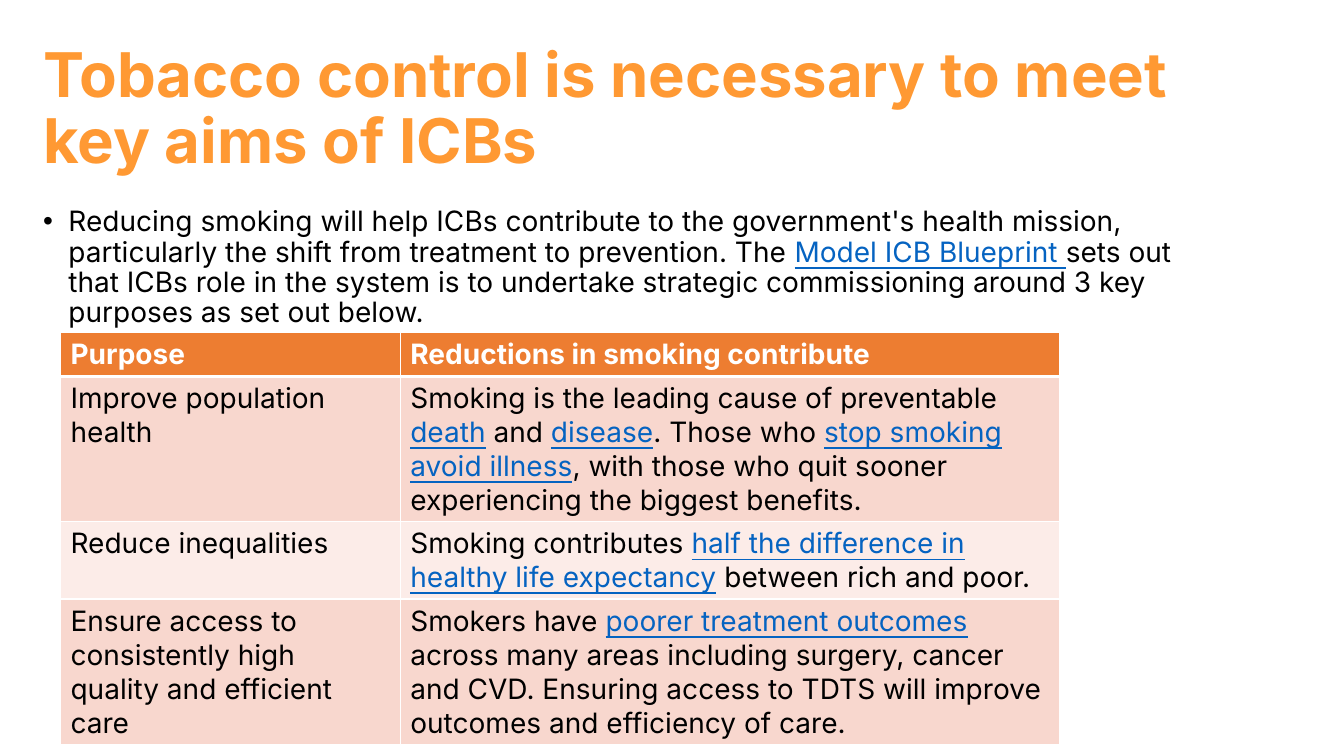
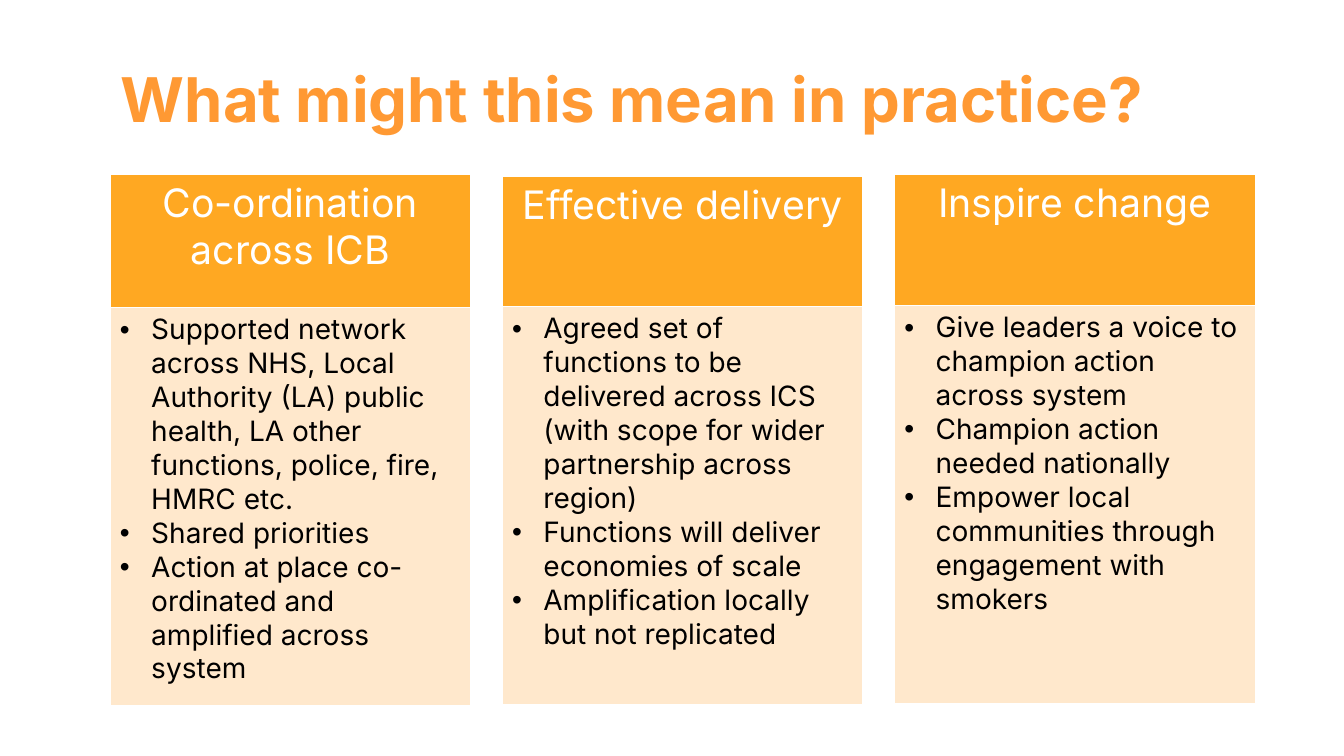
from lxml import etree
from pptx import Presentation
from pptx.dml.color import RGBColor
from pptx.enum.text import MSO_ANCHOR, PP_ALIGN
from pptx.oxml.ns import qn
from pptx.util import Inches, Pt

MIDDLE, TOP = MSO_ANCHOR.MIDDLE, MSO_ANCHOR.TOP
LEFT, CENTER = PP_ALIGN.LEFT, PP_ALIGN.CENTER

WHITE = RGBColor(0xFF, 0xFF, 0xFF)
BLACK = RGBColor(0x00, 0x00, 0x00)
LINK_BLUE = RGBColor(0x05, 0x63, 0xC1)
TITLE_ORANGE = RGBColor(0xFF, 0x99, 0x33)
PURPOSE_HEADER = RGBColor(0xED, 0x7D, 0x31)
PURPOSE_BANDS = (RGBColor(0xF8, 0xD7, 0xCE), RGBColor(0xFC, 0xEC, 0xE8))
THEME_HEADER = RGBColor(0xFF, 0xA8, 0x22)
THEME_BODY = RGBColor(0xFF, 0xE8, 0xCC)

TITLE_FORMAT = {"name": "Inter", "size": Pt(44), "bold": True}
BODY_FORMAT = {"name": "Inter", "size": Pt(20), "bold": False}
PURPOSE_HEADER_FORMAT = {**BODY_FORMAT, "bold": True}
THEME_HEADER_FORMAT = {**BODY_FORMAT, "size": Pt(28)}

# Text between bars is shown as a link.
INTRO = (
    "Reducing smoking will help ICBs contribute to the government's health mission, "
    "particularly the shift from treatment to prevention. The |Model ICB Blueprint |"
    "sets out that ICBs role in the system is to undertake strategic commissioning "
    "around 3 key purposes as set out below."
)
PURPOSE_COLUMNS = (3.37, 6.54)
PURPOSE_ROWS = (
    (0.42, "Purpose", "Reductions in smoking contribute"),
    (1.44, "Improve population health",
     "Smoking is the leading cause of preventable |death| and |disease|. Those who "
     "|stop smoking avoid illness|, with those who quit sooner experiencing the "
     "biggest benefits."),
    (0.77, "Reduce inequalities",
     "Smoking contributes |half the difference in healthy life expectancy| between "
     "rich and poor."),
    (1.44, "Ensure access to consistently high quality and efficient care",
     "Smokers have |poorer treatment outcomes |across many areas including surgery, "
     "cancer and CVD. Ensuring access to TDTS will improve outcomes and efficiency "
     "of care."),
)

THEME_LEFT, THEME_STEP, THEME_WIDTH, THEME_BODY_HEIGHT = 1.09, 3.89, 3.58, 3.95
# Top, header height, heading, points
THEMES = (
    (1.73, 1.32, "Co-ordination across ICB", (
        "Supported network across NHS, Local Authority (LA) public health, LA other "
        "functions, police, fire, HMRC etc.",
        "Shared priorities",
        "Action at place co-ordinated and amplified across system")),
    (1.75, 1.29, "Effective delivery", (
        "Agreed set of functions to be delivered across ICS (with scope for wider "
        "partnership across region)",
        "Functions will deliver economies of scale",
        "Amplification locally but not replicated")),
    (1.73, 1.3, "Inspire change", (
        "Give leaders a voice to champion action across system",
        "Champion action needed nationally",
        "Empower local communities through engagement with smokers")),
)


def add_bullet(paragraph, indent):
    properties = paragraph._p.get_or_add_pPr()
    properties.set("marL", str(Inches(indent)))
    properties.set("indent", str(-Inches(indent)))
    etree.SubElement(properties, qn("a:buFont")).set("typeface", "Arial")
    etree.SubElement(properties, qn("a:buChar")).set("char", "•")


def write_text(frame, texts, text_format, color, align=LEFT, spacing=1.0, bullet=None):
    """Write one paragraph per text; bullet is the hanging indent in inches."""
    for index, text in enumerate(texts):
        paragraph = frame.add_paragraph() if index else frame.paragraphs[0]
        if bullet:
            add_bullet(paragraph, bullet)
        paragraph.alignment = align
        paragraph.line_spacing = spacing
        for part, words in enumerate(text.split("|")):
            is_link = part % 2 == 1
            run = paragraph.add_run()
            run.text = words
            for attribute, value in text_format.items():
                setattr(run.font, attribute, value)
            run.font.underline = is_link
            run.font.color.rgb = LINK_BLUE if is_link else color


def add_text(slide, box, texts, text_format, color, anchor=TOP, bullet=None):
    frame = slide.shapes.add_textbox(*map(Inches, box)).text_frame
    frame.word_wrap = True
    frame.vertical_anchor = anchor
    write_text(frame, texts, text_format, color, spacing=0.9, bullet=bullet)


def add_title(slide, box, title):
    add_text(slide, box, [title], TITLE_FORMAT, TITLE_ORANGE, anchor=MIDDLE)


def add_plain_table(slide, left, top, widths, heights):
    """Add a table without the banded style."""
    table = slide.shapes.add_table(
        len(heights), len(widths), Inches(left), Inches(top),
        Inches(sum(widths)), Inches(sum(heights))).table
    table.first_row = table.horz_banding = False
    for column, width in zip(table.columns, widths):
        column.width = Inches(width)
    for row, height in zip(table.rows, heights):
        row.height = Inches(height)
    return table


def paint_cell(cell, fill, top=1, bottom=1):
    """Fill a cell and give it white borders, with widths in points."""
    properties = cell._tc.get_or_add_tcPr()
    for side, width in (("L", 1), ("R", 1), ("T", top), ("B", bottom)):
        border = etree.SubElement(properties, qn(f"a:ln{side}"), w=str(Pt(width)))
        solid = etree.SubElement(border, qn("a:solidFill"))
        etree.SubElement(solid, qn("a:srgbClr")).set("val", str(WHITE))
    cell.fill.solid()
    cell.fill.fore_color.rgb = fill


def add_purpose_table(slide):
    heights = [row[0] for row in PURPOSE_ROWS]
    table = add_plain_table(slide, 0.6, 3.3, PURPOSE_COLUMNS, heights)
    for row, (_, *texts) in enumerate(PURPOSE_ROWS):
        for column, text in enumerate(texts):
            cell = table.cell(row, column)
            if row == 0:
                paint_cell(cell, PURPOSE_HEADER, bottom=3)
                write_text(cell.text_frame, [text], PURPOSE_HEADER_FORMAT, WHITE)
            else:
                paint_cell(cell, PURPOSE_BANDS[(row - 1) % 2], top=3 if row == 1 else 1)
                write_text(cell.text_frame, [text], BODY_FORMAT, BLACK)


def add_theme(slide, left, top, header_height, heading, points):
    table = add_plain_table(
        slide, left, top, [THEME_WIDTH], [header_height, THEME_BODY_HEIGHT])
    header, body = table.cell(0, 0), table.cell(1, 0)
    paint_cell(header, THEME_HEADER)
    write_text(header.text_frame, [heading], THEME_HEADER_FORMAT, WHITE, align=CENTER)
    paint_cell(body, THEME_BODY)
    write_text(body.text_frame, points, BODY_FORMAT, BLACK, bullet=0.31)


def main():
    deck = Presentation()
    deck.slide_width, deck.slide_height = Inches(13.33), Inches(7.5)
    blank = deck.slide_layouts[6]

    aims = deck.slides.add_slide(blank)
    add_title(aims, (0.33, 0.37, 11.5, 1.45),
              "Tobacco control is necessary to meet key aims of ICBs")
    add_text(aims, (0.33, 2.01, 11.61, 1.29), [INTRO], BODY_FORMAT, BLACK, bullet=0.25)
    add_purpose_table(aims)

    practice = deck.slides.add_slide(blank)
    add_title(practice, (1.1, 0.29, 10.86, 1.45), "What might this mean in practice?")
    for index, theme in enumerate(THEMES):
        add_theme(practice, THEME_LEFT + index * THEME_STEP, *theme)

    deck.save("out.pptx")


if __name__ == "__main__":
    main()
